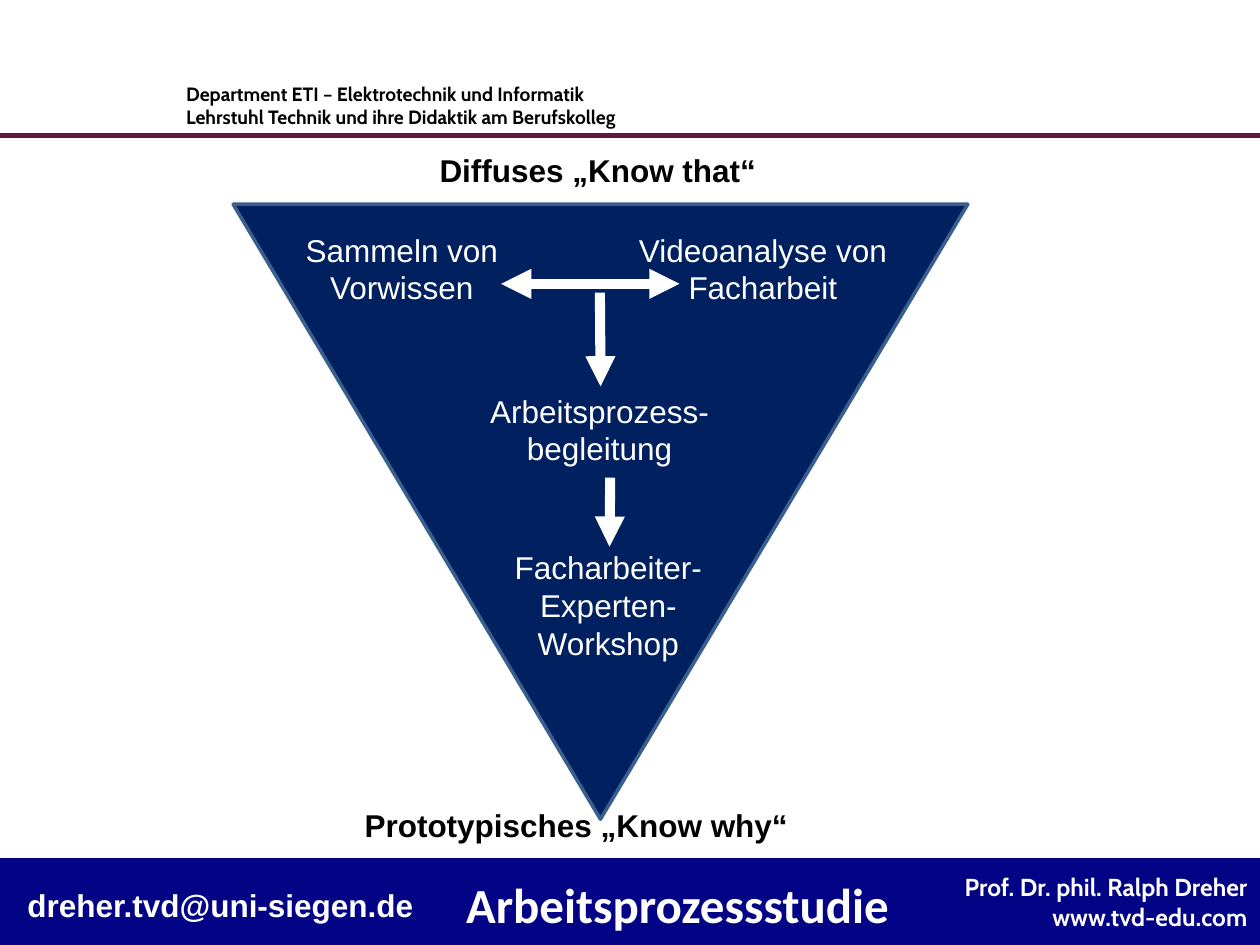
import pptx
import pptx.dml.color
import pptx.enum.shapes
import pptx.enum.text
import pptx.oxml.ns
import pptx.util
from lxml import etree

Pt = pptx.util.Pt
SHAPE = pptx.enum.shapes.MSO_SHAPE
ALIGN = pptx.enum.text.PP_ALIGN
ANCHOR = pptx.enum.text.MSO_ANCHOR
qn = pptx.oxml.ns.qn

THEME = {
    "white": "FFFFFF", "black": "000000", "bar": "030385", "rule": "611543",
    "triangle": "002060", "outline": "3A5F8C",
    "title": 28, "body": 18, "contact": 14, "header": 11,
    "font": "Arial", "title_font": "Calibri", "brand_font": "Cabin",
}


def write(sp, text, size="body", color="white", font="font", bold=False,
          align=ALIGN.LEFT, anchor=ANCHOR.TOP, wrap=False):
    """Fill a shape with one paragraph per line and format it by theme keys."""
    tf = sp.text_frame
    tf.text = text
    tf.word_wrap = wrap
    tf.vertical_anchor = anchor
    for p in tf.paragraphs:
        p.alignment = align
        for r in p.runs:
            r.font.name = THEME[font]
            r.font.size = Pt(THEME[size])
            r.font.bold = bold
            r.font.color.rgb = pptx.dml.color.RGBColor.from_string(THEME[color])


def add_line(x1, y1, x2, y2, color, width, ends=()):
    """Draw a straight line; ends names the XML arrowheads it carries."""
    line = slide.shapes.add_connector(
        pptx.enum.shapes.MSO_CONNECTOR.STRAIGHT, Pt(x1), Pt(y1), Pt(x2), Pt(y2))
    line.line.color.rgb = pptx.dml.color.RGBColor.from_string(THEME[color])
    line.line.width = Pt(width)
    ln = line.line._get_or_add_ln()
    for end in ends:
        etree.SubElement(ln, qn(f"a:{end}")).set("type", "triangle")
    etree.SubElement(ln.getparent(), qn("a:effectLst"))


prs = pptx.Presentation()
prs.slide_width, prs.slide_height = Pt(720), Pt(540)
slide = prs.slides.add_slide(prs.slide_layouts[5])

# Footer bar and header
bar = slide.shapes.add_shape(SHAPE.RECTANGLE, 0, Pt(490.3), Pt(720), Pt(49.7))
bar.shadow.inherit = False
bar.fill.solid()
bar.fill.fore_color.rgb = pptx.dml.color.RGBColor.from_string(THEME["bar"])
bar.line.fill.background()
write(bar, "Prof. Dr. phil. Ralph Dreher\nwww.tvd-edu.com", "contact",
      font="brand_font", bold=True, align=ALIGN.RIGHT, anchor=ANCHOR.MIDDLE, wrap=True)

add_line(0, 77.6, 720, 77.6, "rule", 3)
header = slide.shapes.add_textbox(Pt(99.2), Pt(43.2), Pt(408), Pt(34))
write(header, "Department ETI – Elektrotechnik und Informatik\n"
      "Lehrstuhl Technik und ihre Didaktik am Berufskolleg",
      "header", "black", "brand_font", bold=True, wrap=True)

# Title sits on the footer bar, so it moves to the front
title = slide.shapes.title
title.left, title.top, title.width, title.height = Pt(259.2), Pt(496), Pt(258.5), Pt(41)
write(title, "Arbeitsprozessstudie", "title", font="title_font", bold=True)
title.element.getparent().append(title.element)

# Funnel
triangle = slide.shapes.add_shape(
    SHAPE.ISOSCELES_TRIANGLE, Pt(133.2), Pt(116.7), Pt(419.8), Pt(351.4))
triangle.rotation = 180
triangle.adjustments[0] = 0.5
triangle.shadow.inherit = False
triangle.fill.solid()
triangle.fill.fore_color.rgb = pptx.dml.color.RGBColor.from_string(THEME["triangle"])
triangle.line.color.rgb = pptx.dml.color.RGBColor.from_string(THEME["outline"])
triangle.line.width = Pt(2)

# Bold captions: left, top, width, colour, text
captions = [
    (244.1, 82.8, 197.3, "black", "Diffuses „Know that“"),
    (201.3, 457.2, 259.2, "black", "Prototypisches „Know why“"),
    (8.6, 502.6, 236.9, "white", "dreher.tvd@uni-siegen.de"),
]
for left, top, width, color, text in captions:
    caption = slide.shapes.add_textbox(Pt(left), Pt(top), Pt(width), Pt(29))
    write(caption, text, color=color, bold=True)

# Steps: left, top, width, text
steps = [
    (167, 128.2, 125.3, "Sammeln von\nVorwissen"),
    (354.3, 128.2, 163.4, "Videoanalyse von\nFacharbeit"),
    (272.4, 220.3, 140.4, "Arbeitsprozess-\nbegleitung"),
    (286.4, 309.6, 122.4, "Facharbeiter-\nExperten-\nWorkshop"),
]
for left, top, width, text in steps:
    lines = text.count("\n") + 1
    step = slide.shapes.add_textbox(Pt(left), Pt(top), Pt(width), Pt(7.2 + 21.8 * lines))
    write(step, text, align=ALIGN.CENTER)

# Arrows between the steps
arrows = [
    (286.4, 162.2, 388.3, 162.2, ("headEnd", "tailEnd")),
    (342.8, 167.2, 343.2, 220.8, ("tailEnd",)),
    (348.7, 273, 348.3, 312.4, ("tailEnd",)),
]
for x1, y1, x2, y2, ends in arrows:
    add_line(x1, y1, x2, y2, "white", 5.75, ends)

prs.save("out.pptx")
